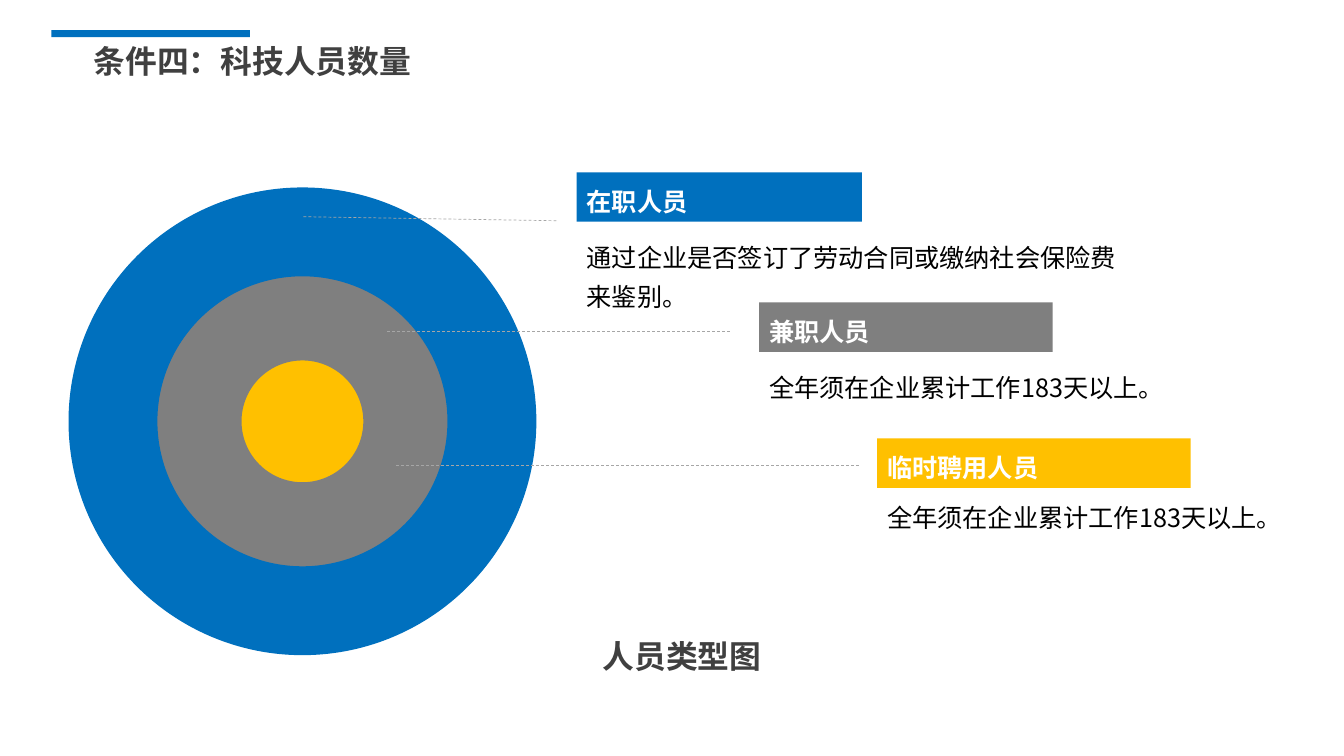
from lxml import etree
from pptx import Presentation
from pptx.dml.color import RGBColor
from pptx.enum import dml, shapes, text
from pptx.oxml import ns
from pptx.util import Pt

SCALE = 9144
BLUE, GRAY, GOLD = "0070BE", "7F7F7F", "FFC000"
WHITE, BLACK, DARK, PALE = "FFFFFF", "000000", "404040", "A6A6A6"
SANS = "Noto Sans CJK SC"
KIND = shapes.MSO_SHAPE


def px(*nums):
    return [n * SCALE for n in nums]


def hue(code):
    return RGBColor.from_string(code)


class Deck:
    def __init__(self, wide, high):
        self.prs = Presentation()
        self.prs.slide_width, self.prs.slide_height = px(wide, high)
        self.slide = self.prs.slides.add_slide(self.prs.slide_layouts[6])
        self.pool = self.slide.shapes

    def shape(self, kind, box, fill, ring=None):
        item = self.pool.add_shape(kind, *px(*box))
        item.shadow.inherit = False
        item.fill.solid()
        item.fill.fore_color.rgb = hue(fill)
        item.line.fill.background()
        if ring is not None:
            item.adjustments[0] = ring
        return item

    def letter(self, item, words, color, size=18, bold=False, font=SANS,
               align=text.PP_ALIGN.LEFT, anchor=text.MSO_ANCHOR.TOP):
        frame = item.text_frame
        frame.word_wrap = True
        frame.vertical_anchor = anchor
        para = frame.paragraphs[0]
        para.alignment = align
        para.line_spacing = 1.3
        run = para.add_run()
        run.text = words
        face = run.font
        face.name, face.size, face.bold = font, Pt(size), bold
        face.color.rgb = hue(color)
        east = etree.SubElement(run._r.get_or_add_rPr(), ns.qn("a:ea"))
        east.set("typeface", SANS)

    def note(self, box, words):
        item = self.pool.add_textbox(*px(*box))
        self.letter(item, words, BLACK)
        item.text_frame.auto_size = text.MSO_AUTO_SIZE.SHAPE_TO_FIT_TEXT

    def head(self, box, words, align):
        item = self.pool.add_textbox(*px(*box))
        self.letter(item, words, DARK, 22.7, True, "Quicksand", align,
                    text.MSO_ANCHOR.MIDDLE)

    def label(self, box, words, fill):
        self.letter(self.shape(KIND.RECTANGLE, box, fill), words, WHITE,
                    bold=True)

    def line(self, ends):
        item = self.pool.add_connector(shapes.MSO_CONNECTOR.STRAIGHT,
                                       *px(*ends))
        item.line.color.rgb = hue(PALE)
        item.line.width = Pt(0.5)
        item.line.dash_style = dml.MSO_LINE.DASH
        etree.SubElement(item._element.spPr, ns.qn("a:effectLst"))


def main():
    deck = Deck(1333, 750)
    deck.shape(KIND.RECTANGLE, (51, 30, 197, 7), BLUE)
    deck.head((83, 24, 529, 61), "条件四：科技人员数量", text.PP_ALIGN.LEFT)

    mid, row = 300, 418
    for kind, size, fill, ring in (
        (KIND.OVAL, 134, GOLD, None),
        (KIND.DONUT, 318, GRAY, 0.31),
        (KIND.DONUT, 464, BLUE, 0.19),
    ):
        half = size // 2
        deck.shape(kind, (mid - half, row - half, size, size), fill, ring)

    days = "全年须在企业累计工作183天以上。"
    proof = "通过企业是否签订了劳动合同或缴纳社会保险费来鉴别。"
    tall = 49
    for name, fill, left, top, wide, words, box, ends in (
        ("在职人员", BLUE, 572, 171, 283, proof, (226, 563, 88),
         (301, 215, 552, 219)),
        ("兼职人员", GRAY, 753, 300, 291, days, (355, 449, tall),
         (384, 329, 725, 329)),
        ("临时聘用人员", GOLD, 870, 435, 311, days, (484, 438, tall),
         (393, 462, 852, 462)),
    ):
        deck.line(ends)
        deck.note((left, *box), words)
        deck.label((left, top, wide, tall), name, fill)

    deck.head((412, 614, 529, 61), "人员类型图", text.PP_ALIGN.CENTER)
    deck.prs.save("out.pptx")


if __name__ == "__main__":
    main()
